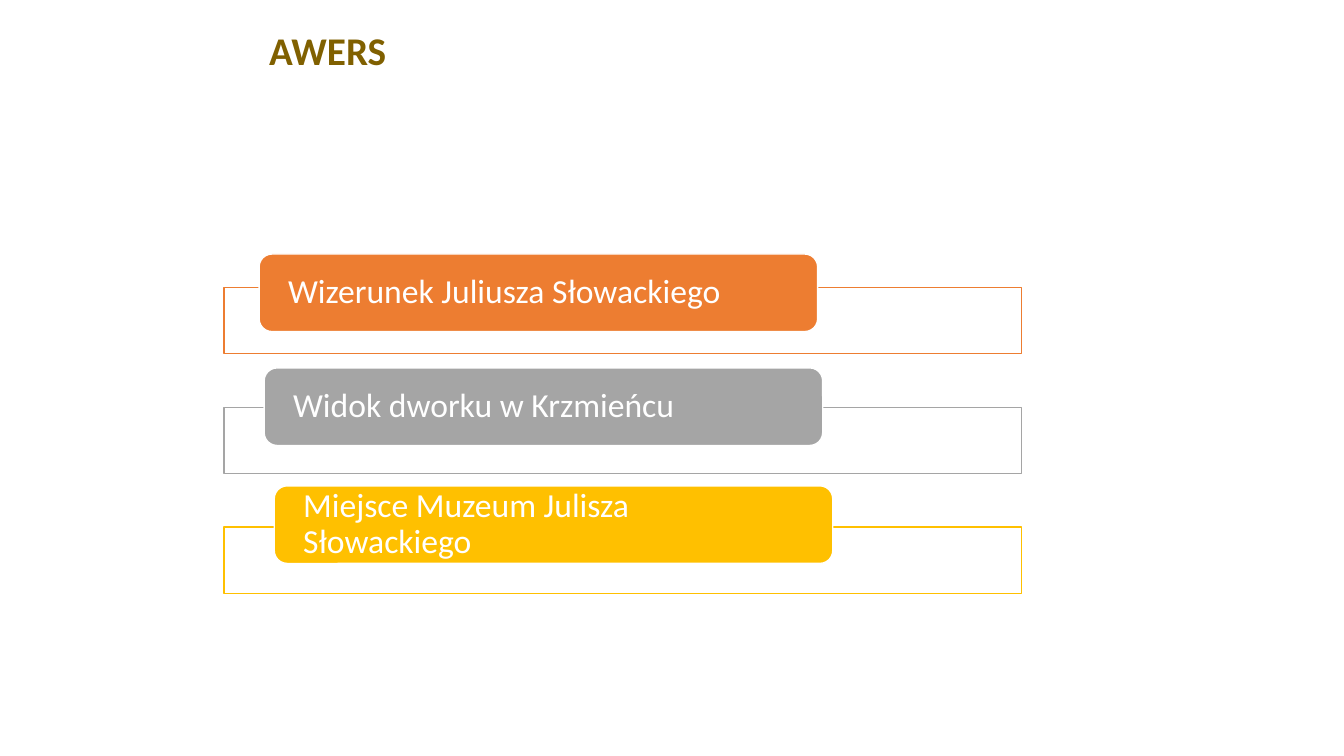
import pptx
import pptx.dml.color
import pptx.enum.shapes
import pptx.enum.text
import pptx.oxml.ns
import pptx.util
from lxml import etree
from pptx.util import Inches

COLORS = {
    "white": "FFFFFF",
    "title": "806000",
    "orange": "ED7D31",
    "gray": "A5A5A5",
    "gold": "FFC000",
}
ITEMS = [
    ("Wizerunek Juliusza Słowackiego", "orange", 2.57, 2.52),
    ("Widok dworku w Krzmieńcu", "gray", 2.62, 3.65),
    ("Miejsce Muzeum Julisza Słowackiego", "gold", 2.72, 4.82),
]
FRAME_LEFT, FRAME_TOP, FRAME_STEP = 2.22, 2.85, 1.19
SHAPES = pptx.enum.shapes.MSO_SHAPE


def rgb(name):
    return pptx.dml.color.RGBColor.from_string(COLORS[name])


def write(sp, text, size, color, bold=False, inset=0.1, spacing=1.0):
    tf = sp.text_frame
    tf.word_wrap = True
    tf.auto_size = pptx.enum.text.MSO_AUTO_SIZE.NONE
    tf.vertical_anchor = pptx.enum.text.MSO_ANCHOR.MIDDLE
    tf.margin_left = tf.margin_right = Inches(inset)
    p = tf.paragraphs[0]
    p.alignment = pptx.enum.text.PP_ALIGN.LEFT
    p.line_spacing = spacing
    r = p.add_run()
    r.text = text
    r.font.name = "Calibri"
    r.font.size = pptx.util.Pt(size)
    r.font.bold = bold
    r.font.color.rgb = rgb(color)


prs = pptx.Presentation()
prs.slide_width, prs.slide_height = Inches(13.33), Inches(7.5)
s = prs.slides.add_slide(prs.slide_layouts[5])

title = s.shapes.title
title.left, title.top = Inches(2.57), Inches(0.21)
title.width, title.height = Inches(7.91), Inches(0.57)
write(title, "AWERS", 28, "title", bold=True)

for i, (text, color, left, top) in enumerate(ITEMS):
    frame = s.shapes.add_shape(
        SHAPES.RECTANGLE, Inches(FRAME_LEFT), Inches(FRAME_TOP + i * FRAME_STEP),
        Inches(7.91), Inches(0.66))
    label = s.shapes.add_shape(
        SHAPES.ROUNDED_RECTANGLE, Inches(left), Inches(top), Inches(5.54), Inches(0.77))
    for sp, fill, line in ((frame, "white", color), (label, color, "white")):
        sp.shadow.inherit = False
        sp.fill.solid()
        sp.fill.fore_color.rgb = rgb(fill)
        sp.line.color.rgb = rgb(line)
        sp.line.width = pptx.util.Pt(1)

    # The frame is 90 % opaque
    fill_color = frame.fill._xPr.find(".//" + pptx.oxml.ns.qn("a:srgbClr"))
    etree.SubElement(fill_color, pptx.oxml.ns.qn("a:alpha"), val="90000")

    write(label, text, 24, "white", inset=0.25, spacing=0.9)

prs.save("out.pptx")
